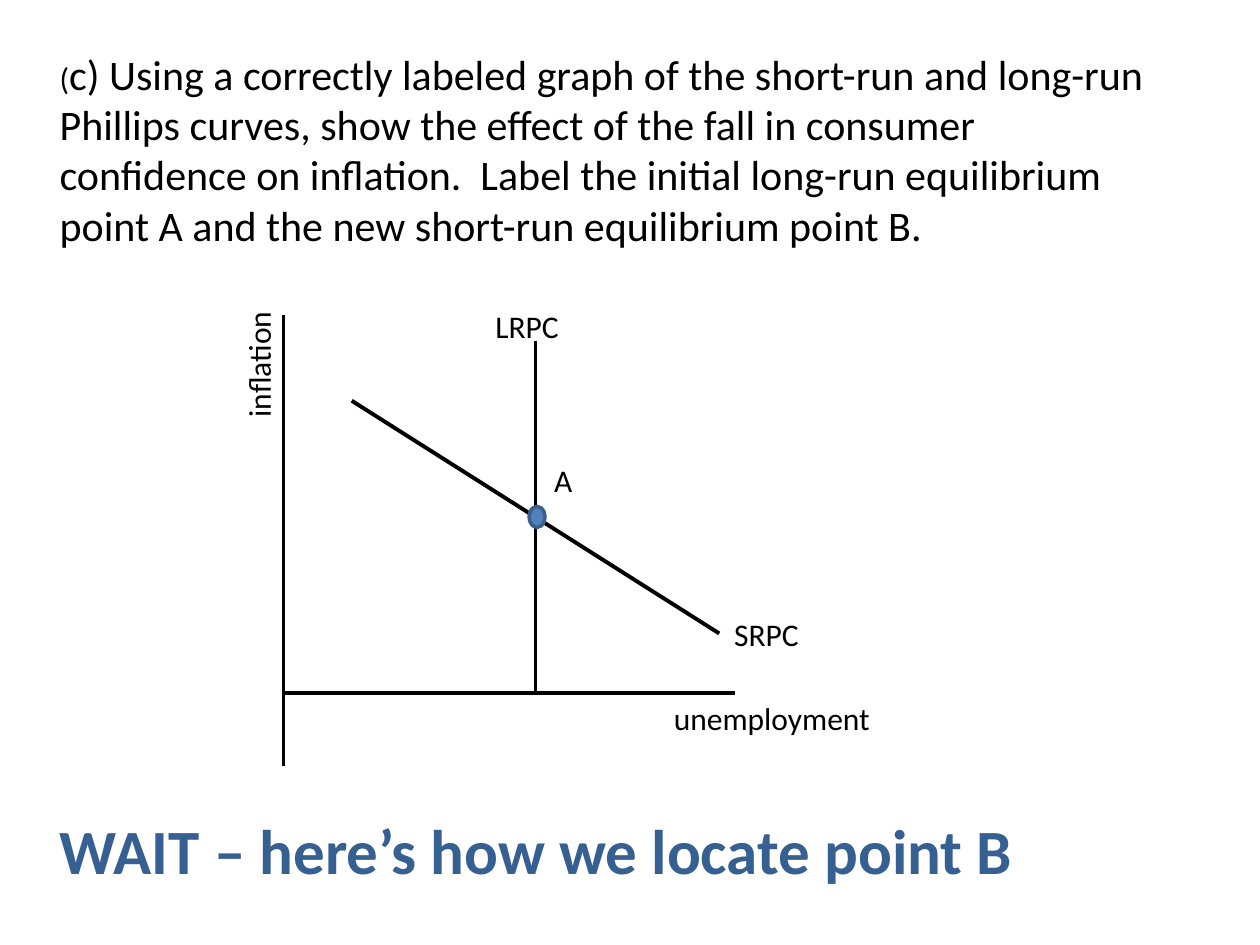
import pptx
import pptx.util
import pptx.dml.color
import pptx.enum.shapes
import pptx.oxml.ns
import lxml.etree

Pt = pptx.util.Pt

QUESTION = [
    ("(", 18),
    ("c) Using a correctly labeled graph of the short-run and long-run Phillips curves, "
     "show the effect of the fall in consumer confidence on inflation.  Label the initial "
     "long-run equilibrium point A and the new short-run equilibrium point B.", 24),
]
CALLOUT = "WAIT – here’s how we locate point B"

# Graph lines: x1, y1, x2, y2
LINES = [
    (162, 180, 162, 438),         # inflation axis
    (420, 396, 162, 396),         # unemployment axis
    (306, 195, 306, 396),         # long-run curve
    (201, 229, 411, 362),         # short-run curve
]
# Graph labels: text, left, top, rotation
LABELS = [
    ("unemployment", 378, 396, 0),
    ("inflation", 72.75, 156, 270),
    ("LRPC", 276, 172, 0),
    ("SRPC", 412.5, 348, 0),
    ("A", 309.6, 260, 0),
]
LABEL_SIZE = (150, 29)
POINT_A = (302.4, 289.4, 9, 12)

BLACK, BLUE, BLUE_EDGE, CALLOUT_BLUE = "000000", "4F81BD", "3A5F8C", "376092"


def rgb(value):
    return pptx.dml.color.RGBColor.from_string(value)


def add_text(s, box, runs, color=BLACK, bold=False, rotation=0):
    """Add a one-paragraph text box; runs are (text, size) pairs."""
    tb = s.shapes.add_textbox(*map(Pt, box))
    tb.rotation = rotation
    tf = tb.text_frame
    tf.word_wrap = True
    p = tf.paragraphs[0]
    for text, size in runs:
        r = p.add_run()
        r.text = text
        r.font.name = "Calibri"
        r.font.size = Pt(size)
        r.font.bold = bold
        r.font.color.rgb = rgb(color)


def add_line(s, ends):
    line = s.shapes.add_connector(
        pptx.enum.shapes.MSO_CONNECTOR.STRAIGHT, *map(Pt, ends))
    line.line.color.rgb = rgb(BLACK)
    line.line.width = Pt(2.25)
    lxml.etree.SubElement(line._element.spPr, pptx.oxml.ns.qn("a:effectLst"))


def add_point(s, box):
    sp = s.shapes.add_shape(pptx.enum.shapes.MSO_SHAPE.OVAL, *map(Pt, box))
    sp.shadow.inherit = False
    sp.fill.solid()
    sp.fill.fore_color.rgb = rgb(BLUE)
    sp.line.color.rgb = rgb(BLUE_EDGE)
    sp.line.width = Pt(2)


def main():
    prs = pptx.Presentation()
    prs.slide_width, prs.slide_height = Pt(720), Pt(540)
    s = prs.slides.add_slide(prs.slide_layouts[6])

    add_text(s, (27, 24, 648, 124), QUESTION)
    for ends in LINES:
        add_line(s, ends)
    add_point(s, POINT_A)
    for text, left, top, rotation in LABELS:
        add_text(s, (left, top, *LABEL_SIZE), [(text, 18)], rotation=rotation)
    add_text(s, (27, 460, 600, 51), [(CALLOUT, 36)], CALLOUT_BLUE, bold=True)

    prs.save("out.pptx")


if __name__ == "__main__":
    main()
